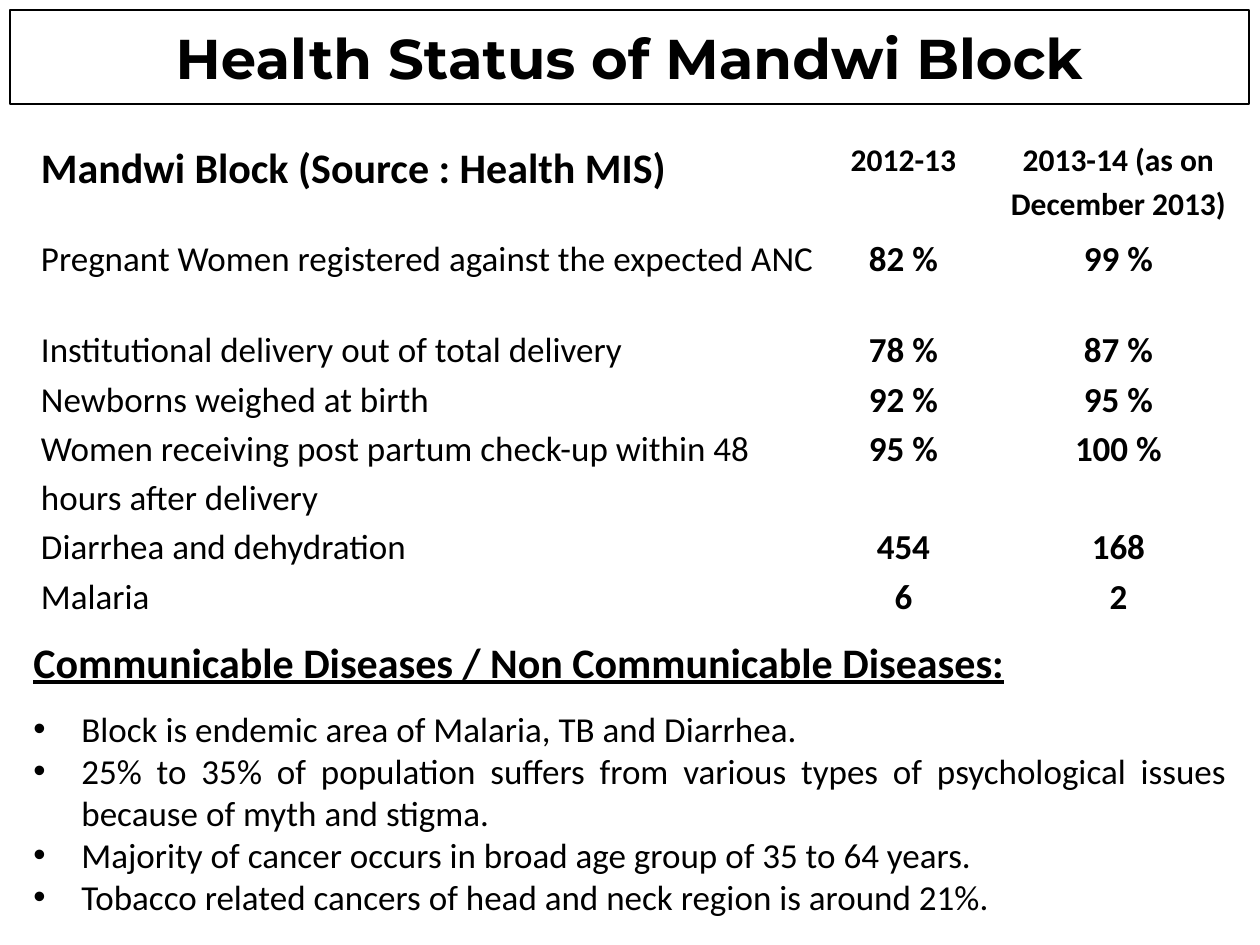
from lxml import etree
from pptx import Presentation
from pptx.dml.color import RGBColor
from pptx.enum.shapes import MSO_SHAPE
from pptx.enum.text import MSO_ANCHOR, PP_ALIGN
from pptx.oxml.ns import qn
from pptx.util import Pt

PX = 914400 / 126
BLACK = RGBColor(0, 0, 0)
LEFT, CENTER, JUST = PP_ALIGN.LEFT, PP_ALIGN.CENTER, PP_ALIGN.JUSTIFY
MIDDLE = MSO_ANCHOR.MIDDLE
RECT = MSO_SHAPE.RECTANGLE


def px(*nums):
    return [round(n * PX) for n in nums]


def write(par, text, size=20, bold=False, line=False, font="Calibri",
          align=LEFT, space=1.0, after=0, bullet=False):
    par.alignment = align
    par.line_spacing = space
    par.space_after = Pt(after)
    run = par.add_run()
    run.text = text
    run.font.name = font
    run.font.size = Pt(size)
    run.font.bold = bold
    run.font.underline = line
    run.font.color.rgb = BLACK
    if bullet:
        props = par._p.get_or_add_pPr()
        dent = px(48)[0]
        props.set("marL", str(dent))
        props.set("indent", str(-dent))
        etree.SubElement(props, qn("a:buFont")).set("typeface", "Arial")
        etree.SubElement(props, qn("a:buChar")).set("char", "•")


deck = Presentation()
deck.slide_width, deck.slide_height = px(1260, 945)
slide = deck.slides.add_slide(deck.slide_layouts[6])

# Health figures
rows = [
    ("Mandwi Block (Source : Health MIS)", "2012-13", "2013-14 (as on December 2013)"),
    ("Pregnant Women registered against the expected ANC", "82 %", "99 %"),
    ("Institutional delivery out of total delivery", "78 %", "87 %"),
    ("Newborns weighed at birth", "92 %", "95 %"),
    ("Women receiving post partum check-up within 48 hours after delivery", "95 %", "100 %"),
    ("Diarrhea and dehydration", "454", "168"),
    ("Malaria", "6", "2"),
]
widths = px(798, 147, 283)
heights = px(96, 91, 45, 45, 91, 45, 45)
table = slide.shapes.add_table(
    len(rows), len(widths), *px(32, 136), sum(widths), sum(heights)).table
table.first_row = table.horz_banding = False
for col, width in zip(table.columns, widths):
    col.width = width
for r, row in enumerate(rows):
    table.rows[r].height = heights[r]
    for c, text in enumerate(row):
        cell = table.cell(r, c)
        cell.fill.background()
        cell.margin_left, cell.margin_right = px(9, 9)
        cell.margin_top = cell.margin_bottom = 0
        size = 20 if r else 18 if c else 24
        write(cell.text_frame.paragraphs[0], text, size=size,
              bold=r == 0 or c > 0, align=CENTER if c else LEFT, space=1.15)

# Title
title = slide.shapes.add_shape(RECT, *px(10, 10, 1239, 94))
title.shadow.inherit = False
title.fill.background()
title.line.color.rgb = BLACK
title.line.width = Pt(0.75)
title.text_frame.vertical_anchor = MIDDLE
write(title.text_frame.paragraphs[0], "Health Status of Mandwi Block",
      size=32, bold=True, font="Montserrat", align=CENTER)

# Diseases
frame = slide.shapes.add_textbox(*px(21, 630, 1218, 297)).text_frame
frame.word_wrap = True
write(frame.paragraphs[0], "Communicable Diseases / Non Communicable Diseases:",
      size=24, bold=True, line=True, align=JUST, after=12)
points = [
    "Block is endemic area of Malaria, TB and Diarrhea.",
    "25% to 35% of population suffers from various types of psychological issues "
    "because of myth and stigma.",
    "Majority of cancer occurs in broad age group of 35 to 64 years.",
    "Tobacco related cancers of head and neck region is around 21%.",
]
for point in points:
    write(frame.add_paragraph(), point, align=JUST, bullet=True)

deck.save("out.pptx")
